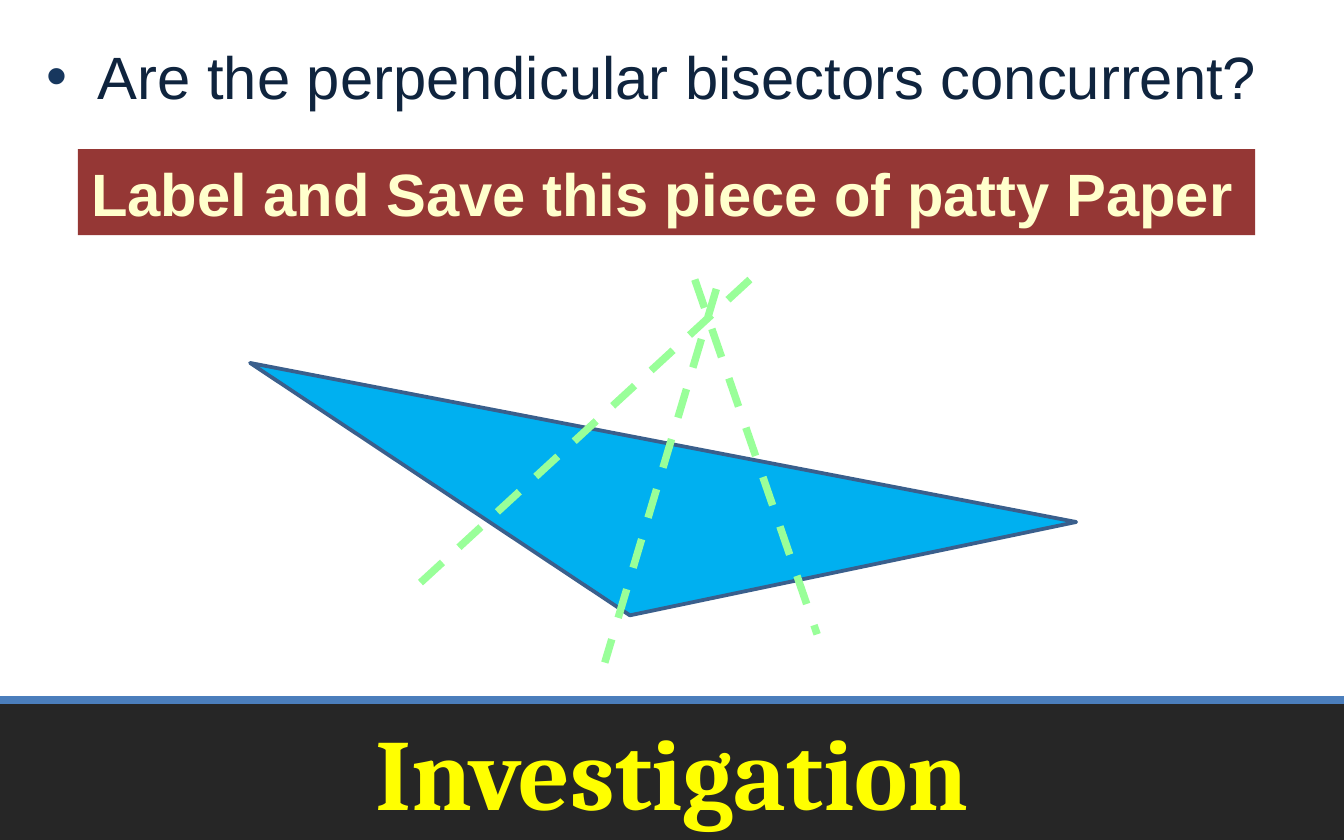
from lxml import etree
from pptx import Presentation
from pptx.dml.color import RGBColor
from pptx.enum.dml import MSO_LINE
from pptx.enum.shapes import MSO_CONNECTOR, MSO_SHAPE
from pptx.enum.text import MSO_ANCHOR, PP_ALIGN
from pptx.oxml.ns import qn
from pptx.util import Inches, Pt

RECTANGLE, TRIANGLE = MSO_SHAPE.RECTANGLE, MSO_SHAPE.ISOSCELES_TRIANGLE
STRAIGHT = MSO_CONNECTOR.STRAIGHT
DASH = MSO_LINE.DASH
TOP, MIDDLE = MSO_ANCHOR.TOP, MSO_ANCHOR.MIDDLE
LEFT, CENTER = PP_ALIGN.LEFT, PP_ALIGN.CENTER

WIDTH, HEIGHT = 10, 6.25
FOOTER_TOP = 5.21
BISECTORS = [
    ((5.33, 2.15), (4.5, 4.93)),
    ((5.17, 2.08), (6.08, 4.72)),
    ((5.58, 2.08), (3.08, 4.38)),
]


def color(hex_code):
    return RGBColor.from_string(hex_code)


class SlideBuilder:
    body_font = "Arial"
    title_font = "Cambria"

    def __init__(self, slide):
        self.slide = slide

    def shape(self, kind, box, fill, outline=None, rotation=0):
        """Add a filled preset shape; outline is (colour, points)."""
        shape = self.slide.shapes.add_shape(kind, *map(Inches, box))
        shape.shadow.inherit = False
        shape.rotation = rotation
        shape.fill.solid()
        shape.fill.fore_color.rgb = color(fill)
        if outline:
            shape.line.color.rgb = color(outline[0])
            shape.line.width = Pt(outline[1])
        else:
            shape.line.fill.background()
        return shape

    def line(self, start, end, stroke, dash=None):
        line = self.slide.shapes.add_connector(
            STRAIGHT, *map(Inches, (*start, *end)))
        line.line.color.rgb = color(stroke)
        line.line.width = Pt(4)
        if dash:
            line.line.dash_style = dash
        etree.SubElement(line._element.spPr, qn("a:effectLst"))

    def set_text(self, frame, text, size, text_color, font=body_font,
                 bold=False, align=LEFT, anchor=MIDDLE):
        """Fill a text frame with one paragraph and return it."""
        frame.word_wrap = True
        frame.vertical_anchor = anchor
        paragraph = frame.paragraphs[0]
        paragraph.text = text
        paragraph.alignment = align
        paragraph.font.name = font
        paragraph.font.size = Pt(size)
        paragraph.font.bold = bold
        paragraph.font.color.rgb = color(text_color)
        return paragraph

    def text(self, box, *content, **style):
        textbox = self.slide.shapes.add_textbox(*map(Inches, box))
        return self.set_text(textbox.text_frame, *content, **style)

    def bullet(self, paragraph, bullet_color, indent):
        properties = paragraph._p.get_or_add_pPr()
        properties.set("marL", str(Inches(indent)))
        properties.set("indent", str(-Inches(indent)))
        tint = etree.Element(qn("a:buClr"))
        etree.SubElement(tint, qn("a:srgbClr"), val=bullet_color)
        typeface = etree.Element(qn("a:buFont"), typeface=self.body_font)
        mark = etree.Element(qn("a:buChar"), char="•")
        # The schema wants bullet settings ahead of the run defaults.
        for position, element in enumerate((tint, typeface, mark)):
            properties.insert(position, element)


def main():
    presentation = Presentation()
    presentation.slide_width = Inches(WIDTH)
    presentation.slide_height = Inches(HEIGHT)
    blank = presentation.slide_layouts[6]
    builder = SlideBuilder(presentation.slides.add_slide(blank))

    footer_height = HEIGHT - FOOTER_TOP
    builder.shape(RECTANGLE, (0, FOOTER_TOP, WIDTH, footer_height), "262626")
    builder.line((0, FOOTER_TOP), (WIDTH, FOOTER_TOP), "4B7EBC")
    builder.text((0.25, FOOTER_TOP, 9.5, footer_height), "Investigation", 54,
                 "FFFF00", font=builder.title_font, bold=True, align=CENTER)

    question = builder.text((0.25, 0.25, 9.5, 4.89),
                            "Are the perpendicular bisectors concurrent?",
                            32, "0F243E", anchor=TOP)
    builder.bullet(question, "17375E", 0.38)

    builder.shape(TRIANGLE, (1.68, 3.28, 6.26, 1.31), "00B0F0",
                  outline=("3A5F8C", 2), rotation=190.9)
    for start, end in BISECTORS:
        builder.line(start, end, "99FF99", DASH)

    reminder = builder.shape(RECTANGLE, (0.58, 1.11, 8.76, 0.64), "953735")
    builder.set_text(reminder.text_frame,
                     "Label and Save this piece of patty Paper",
                     32, "FFFFCC", bold=True)

    presentation.save("out.pptx")


if __name__ == "__main__":
    main()
